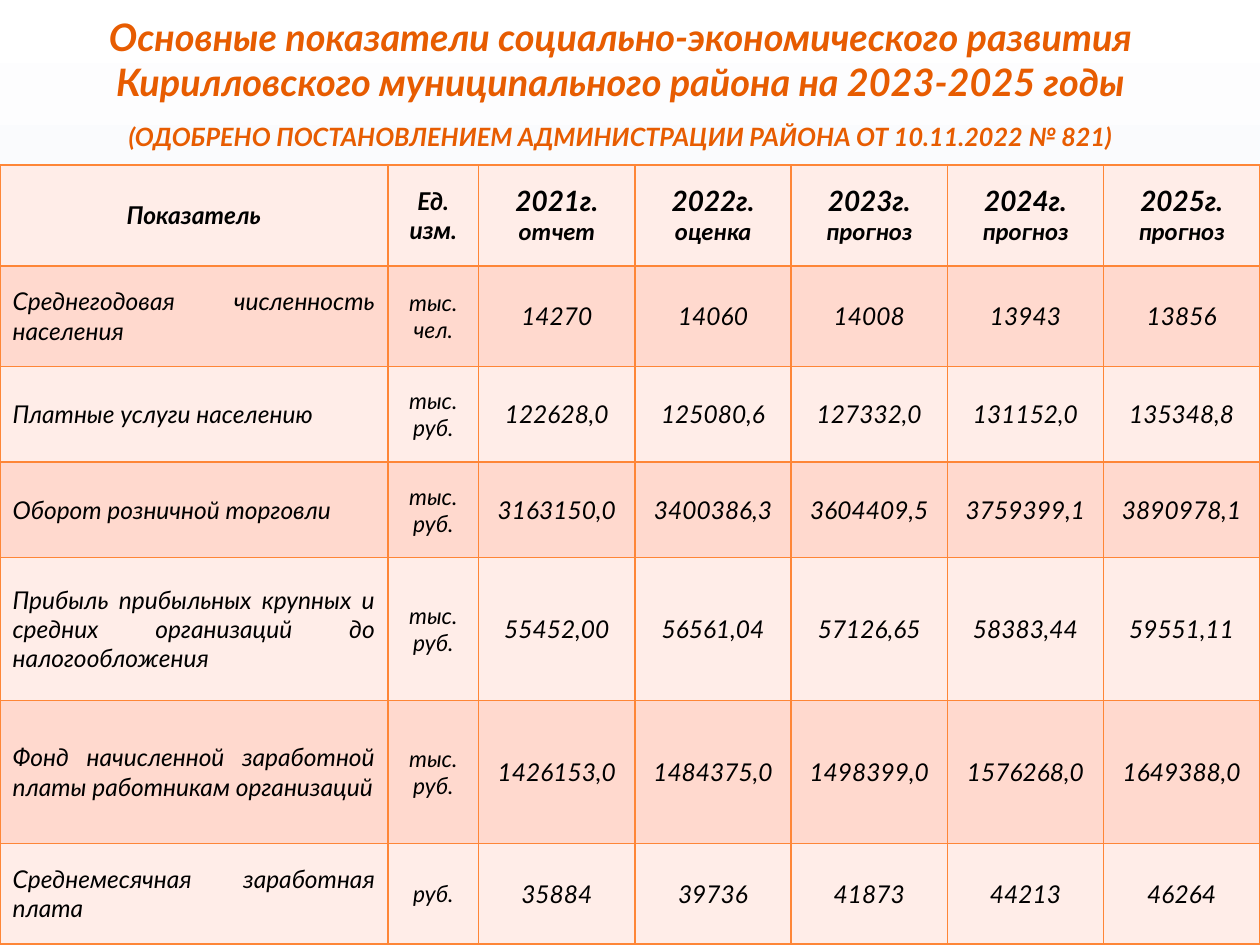
from dataclasses import dataclass

from lxml import etree
from pptx import Presentation
from pptx.dml.color import RGBColor
from pptx.enum import text as t
from pptx.oxml import ns
from pptx.util import Pt


@dataclass(frozen=True)
class Theme:
    font: str = "Lato"
    label_font: str = "Calibri"
    accent: str = "E75C01"
    ink: str = "000000"
    border: str = "FE8637"
    bands: tuple = ("FFEDE8", "FFD9CE")
    backdrop: tuple = ((0, "FFFFFF"), (53, "EFF1F7"), (83, "D9D9D9"), (100, "F2F2F2"))
    title: float = 21.6
    subtitle: float = 14.4
    year: float = 16
    body: float = 14
    unit: float = 13


THEME = Theme()
CENTER, JUSTIFY = t.PP_ALIGN.CENTER, t.PP_ALIGN.JUSTIFY

TITLE = ("Основные показатели социально-экономического развития "
         "Кирилловского муниципального района на 2023-2025 годы")
SUBTITLE = "(ОДОБРЕНО ПОСТАНОВЛЕНИЕМ АДМИНИСТРАЦИИ РАЙОНА ОТ 10.11.2022 № 821)"
YEARS = [("2021г.", "отчет"), ("2022г.", "оценка"), ("2023г.", "прогноз"),
         ("2024г.", "прогноз"), ("2025г.", "прогноз")]
INDICATORS = [
    ("Среднегодовая численность населения", "тыс. чел.",
     "14270", "14060", "14008", "13943", "13856"),
    ("Платные услуги населению", "тыс. руб.",
     "122628,0", "125080,6", "127332,0", "131152,0", "135348,8"),
    ("Оборот розничной торговли", "тыс. руб.",
     "3163150,0", "3400386,3", "3604409,5", "3759399,1", "3890978,1"),
    ("Прибыль прибыльных крупных и средних организаций до налогообложения", "тыс. руб.",
     "55452,00", "56561,04", "57126,65", "58383,44", "59551,11"),
    ("Фонд начисленной заработной платы работникам организаций", "тыс. руб.",
     "1426153,0", "1484375,0", "1498399,0", "1576268,0", "1649388,0"),
    ("Среднемесячная заработная плата", "руб.",
     "35884", "39736", "41873", "44213", "46264"),
]
COLUMN_WIDTHS = [221.6, 52] + [89.28] * len(YEARS)
ROW_HEIGHTS = [57.6, 57.6, 54.6, 54.6, 81.6, 81.6, 57.6]
TABLE_TOP = 94.3


def write(para, text, size=THEME.body, font=THEME.font, color=THEME.ink,
          bold=False, align=CENTER):
    para.alignment = align
    span = para.add_run()
    span.text = text
    span.font.size, span.font.name = Pt(size), font
    span.font.bold, span.font.italic = bold, True
    span.font.color.rgb = RGBColor.from_string(color)


def add_color(parent, color):
    etree.SubElement(parent, ns.qn("a:srgbClr"), val=color)


class SlideBuilder:
    def __init__(self, deck, theme):
        self.theme = theme
        self.slide = deck.slides.add_slide(deck.slide_layouts[5])

    def background(self):
        fill = self.slide.background.fill
        fill.gradient()
        fill.gradient_angle = 270
        stops = fill.gradient_stops
        stop_list = self.slide.background.fill._fill._gradFill.find(ns.qn("a:gsLst")) \
            if len(stops) == 0 else self.slide.element.find(".//" + ns.qn("a:gsLst"))
        for stop in list(stop_list):
            stop_list.remove(stop)
        for percent, color in self.theme.backdrop:
            add_color(etree.SubElement(stop_list, ns.qn("a:gs"), pos=str(percent * 1000)), color)

    def title(self, title, subtitle):
        box = self.slide.shapes.title
        box.left, box.top, box.width, box.height = Pt(14.4), Pt(0), Pt(680.4), Pt(TABLE_TOP)
        frame = box.text_frame
        frame.word_wrap = True
        frame.auto_size = t.MSO_AUTO_SIZE.NONE
        frame.vertical_anchor = t.MSO_ANCHOR.MIDDLE
        style = {"color": self.theme.accent, "bold": True}
        write(frame.paragraphs[0], title, size=self.theme.title, **style)
        para = frame.add_paragraph()
        para.space_before = Pt(10)
        write(para, subtitle, size=self.theme.subtitle, **style)

    def table(self):
        theme = self.theme
        table = self.slide.shapes.add_table(
            len(ROW_HEIGHTS), len(COLUMN_WIDTHS), Pt(0), Pt(TABLE_TOP),
            Pt(sum(COLUMN_WIDTHS)), Pt(sum(ROW_HEIGHTS))).table
        for column, width in zip(table.columns, COLUMN_WIDTHS):
            column.width = Pt(width)
        for index, (row, height) in enumerate(zip(table.rows, ROW_HEIGHTS)):
            row.height = Pt(height)
            for cell in row.cells:
                self.cell_style(cell, theme.bands[index % 2])

        for column, heading in enumerate(("Показатель", "Ед. изм.")):
            write(table.cell(0, column).text_frame.paragraphs[0], heading, bold=True)
        for column, (year, status) in enumerate(YEARS, start=2):
            frame = table.cell(0, column).text_frame
            write(frame.paragraphs[0], year, size=theme.year, bold=True)
            write(frame.add_paragraph(), status, font=theme.label_font, bold=True)

        special = {0: {"align": JUSTIFY}, 1: {"size": theme.unit}}
        for row, values in enumerate(INDICATORS, start=1):
            for column, value in enumerate(values):
                para = table.cell(row, column).text_frame.paragraphs[0]
                write(para, value, **special.get(column, {}))

    def cell_style(self, cell, color):
        """Border lines must precede the fill in the cell properties."""
        cell.vertical_anchor = t.MSO_ANCHOR.MIDDLE
        properties = cell._tc.get_or_add_tcPr()
        for side in ("lnL", "lnR", "lnT", "lnB"):
            line = etree.SubElement(properties, ns.qn("a:" + side), w=str(Pt(1)))
            add_color(etree.SubElement(line, ns.qn("a:solidFill")), self.theme.border)
        cell.fill.solid()
        cell.fill.fore_color.rgb = RGBColor.from_string(color)


def main():
    deck = Presentation()
    deck.slide_width, deck.slide_height = Pt(720), Pt(540)
    builder = SlideBuilder(deck, THEME)
    builder.background()
    builder.table()
    builder.title(TITLE, SUBTITLE)
    deck.save("out.pptx")


if __name__ == "__main__":
    main()
